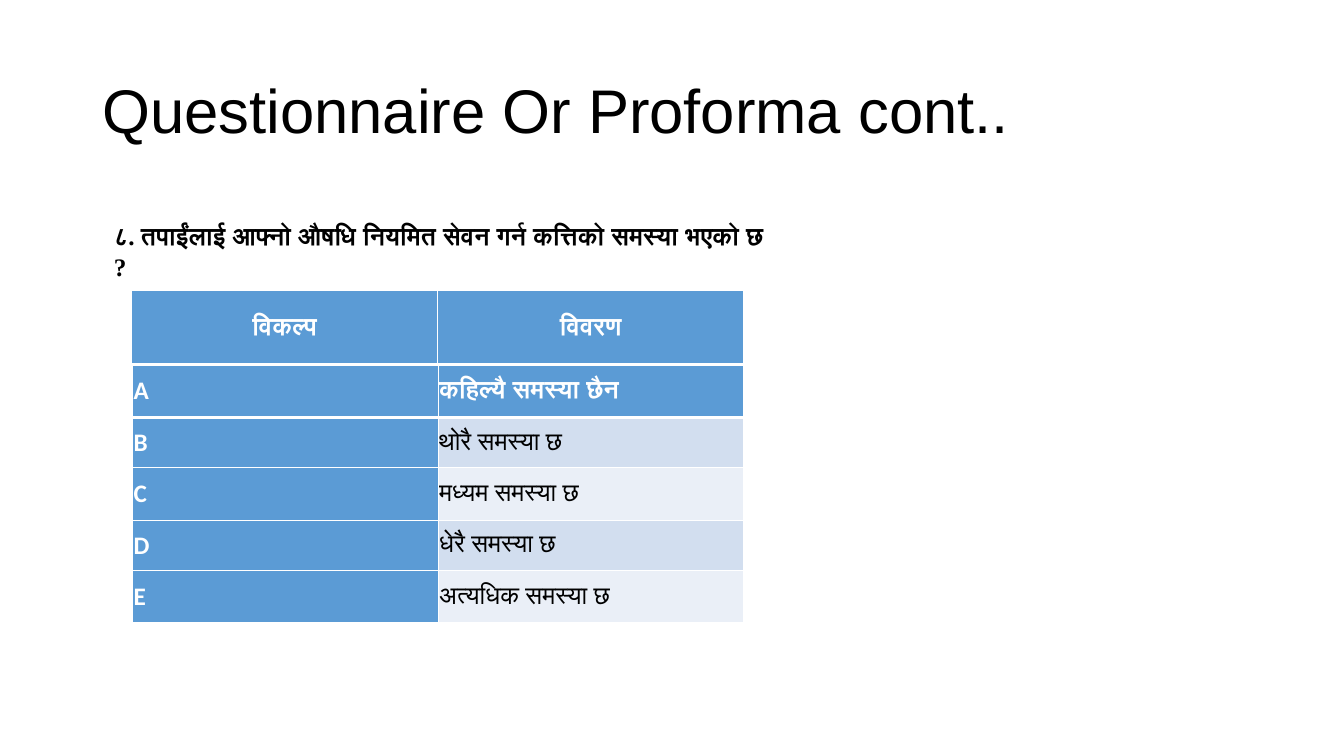
import pptx
import pptx.util
import pptx.dml.color
import pptx.enum.text
import pptx.oxml
import pptx.oxml.ns

Pt = pptx.util.Pt
RGBColor = pptx.dml.color.RGBColor
ALIGN = pptx.enum.text.PP_ALIGN
MIDDLE = pptx.enum.text.MSO_ANCHOR.MIDDLE

BLACK = RGBColor(0x00, 0x00, 0x00)
WHITE = RGBColor(0xFF, 0xFF, 0xFF)
BLUE = RGBColor(0x5B, 0x9B, 0xD5)
BANDS = (RGBColor(0xD2, 0xDE, 0xEF), RGBColor(0xEA, 0xEF, 0xF7))

HEADINGS = ("विकल्प", "विवरण")
OPTIONS = (
    ("A", "कहिल्यै समस्या छैन"),
    ("B", "थोरै समस्या छ"),
    ("C", "मध्यम समस्या छ"),
    ("D", "धेरै समस्या छ"),
    ("E", "अत्यधिक समस्या छ"),
)
QUESTION = (
    ("८", "Roboto"),
    (". ", "Times New Roman"),
    ("तपाईंलाई आफ्नो औषधि नियमित सेवन गर्न कत्तिको समस्या भएको छ ", "Roboto"),
    ("?", "Times New Roman"),
)


def format_run(r, font, size, color, bold=False):
    r.font.name = font
    r.font.size = Pt(size)
    r.font.color.rgb = color
    r.font.bold = bold


def add_text(slide, box, runs, size, bold=False):
    """Add a wrapping text box of (text, font) runs."""
    sp = slide.shapes.add_textbox(*map(Pt, box))
    tf = sp.text_frame
    tf.word_wrap = True
    p = tf.paragraphs[0]
    for text, font in runs:
        r = p.add_run()
        r.text = text
        format_run(r, font, size, BLACK, bold)
    return tf


def set_borders(cell, bottom):
    """Draw white cell borders, with the bottom one in its own width."""
    tcPr = cell._tc.get_or_add_tcPr()
    for i, (side, width) in enumerate(zip("LRTB", (1, 1, 1, bottom))):
        tcPr.insert(i, pptx.oxml.parse_xml(
            f'<a:ln{side} {pptx.oxml.ns.nsdecls("a")} w="{Pt(width)}">'
            f'<a:solidFill><a:srgbClr val="{WHITE}"/></a:solidFill></a:ln{side}>'))


def fill_cell(cell, text, fill, strong, align, bottom):
    cell.text_frame.text = text
    cell.vertical_anchor = MIDDLE
    cell.margin_left = cell.margin_right = Pt(0.75)
    cell.margin_top = cell.margin_bottom = Pt(0.75)
    cell.fill.solid()
    cell.fill.fore_color.rgb = fill
    p = cell.text_frame.paragraphs[0]
    p.alignment = align
    format_run(p.runs[0], "Calibri", 18, WHITE if strong else BLACK, strong)
    set_borders(cell, bottom)


def add_grid(slide, box, rows, heights, align):
    """Add a table whose first row and first column are emphasised."""
    table = slide.shapes.add_table(len(rows), len(rows[0]), *map(Pt, box)).table
    table.first_row = table.horz_banding = False
    for col in table.columns:
        col.width = Pt(box[2] / len(rows[0]))
    for i, (row, height) in enumerate(zip(rows, heights)):
        table.rows[i].height = Pt(height)
        for j, text in enumerate(row):
            strong = i == 0 or j == 0
            fill = BLUE if strong else BANDS[(i - 1) % 2]
            fill_cell(table.cell(i, j), text, fill, strong, align, 3 if i == 0 else 1)


def main():
    prs = pptx.Presentation()
    prs.slide_width, prs.slide_height = Pt(960), Pt(540)
    slide = prs.slides.add_slide(prs.slide_layouts[6])

    # Title
    tf = add_text(slide, (66, 28.8, 828, 104.4),
                  [("Questionnaire Or Proforma cont..", "Arial")], 44)
    tf.vertical_anchor = MIDDLE
    tf.paragraphs[0].line_spacing = 0.9

    # Question
    add_text(slide, (74.2, 154, 480, 65.5), QUESTION, 18, True)

    # Heading row and answer options
    add_grid(slide, (93.9, 207.5, 437.6, 53.3), [HEADINGS], [53.3], ALIGN.CENTER)
    add_grid(slide, (94.8, 260.8, 436.4, 184.2), OPTIONS,
             [37.4, 36, 37.4, 36, 37.4], ALIGN.LEFT)

    prs.save("out.pptx")


if __name__ == "__main__":
    main()
